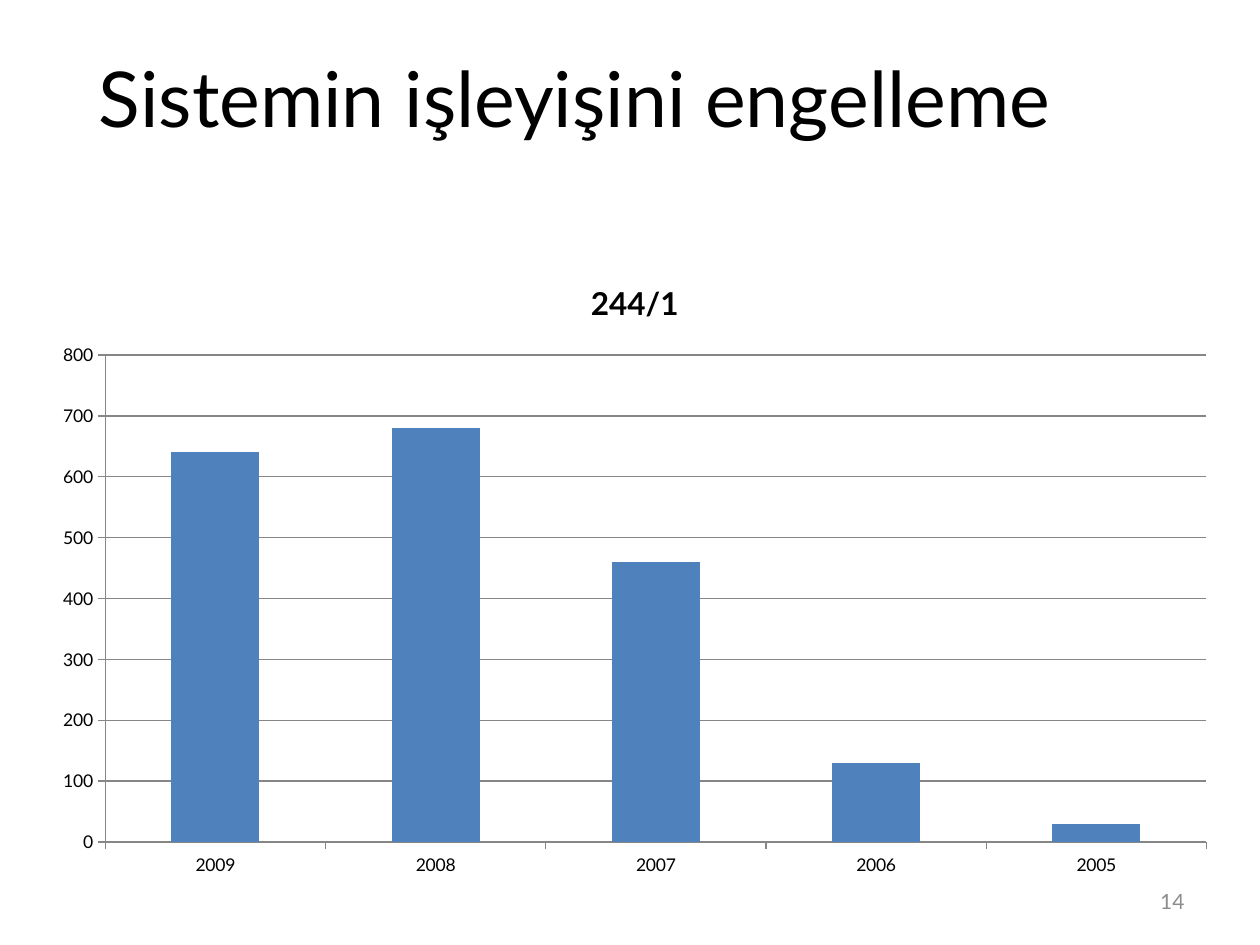
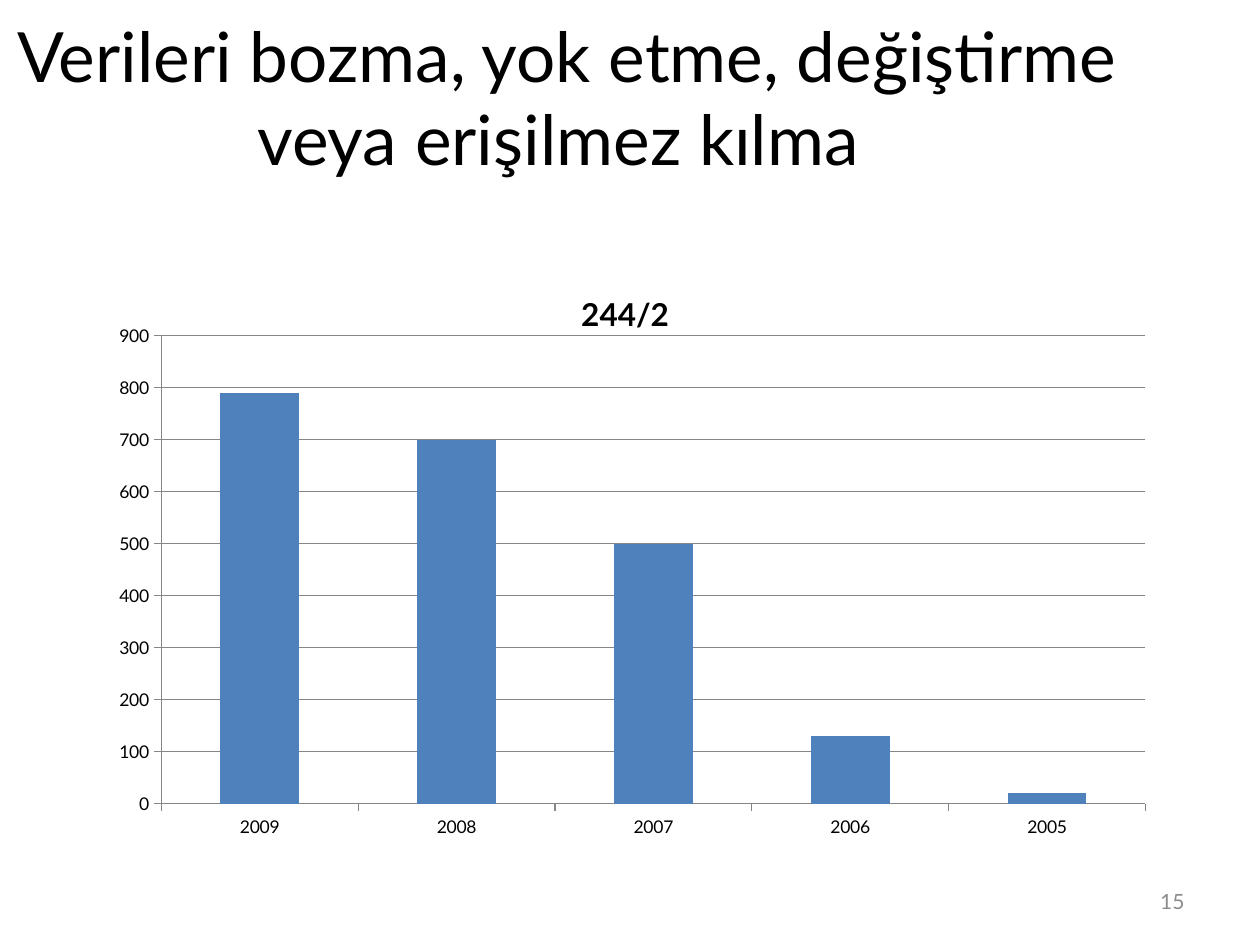
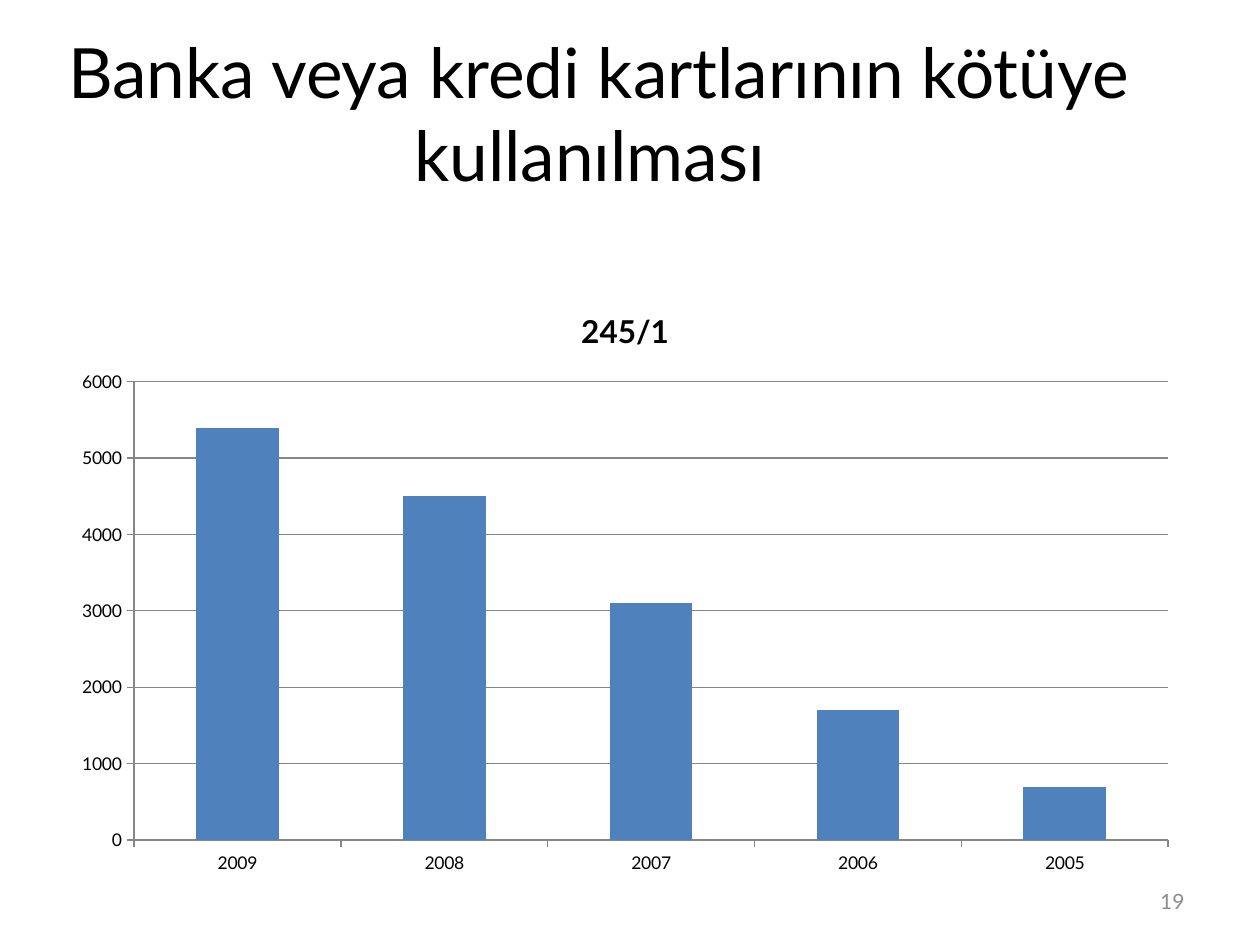
from lxml import etree
from pptx import Presentation
from pptx.chart.data import CategoryChartData
from pptx.dml.color import RGBColor
from pptx.enum import chart as charts, text
from pptx.util import Pt

FONT = "Lato"
BLACK = RGBColor(0x00, 0x00, 0x00)
GREY = RGBColor(0x8C, 0x8C, 0x8C)
AXIS_GREY = RGBColor(0x86, 0x86, 0x86)
BLUE = RGBColor(0x4F, 0x81, 0xBD)
CHART_NS = "http://schemas.openxmlformats.org/drawingml/2006/chart"
YEARS = ["2009", "2008", "2007", "2006", "2005"]
TITLE_ONLY = 5


def style_font(font, size, colour, bold=False):
    font.name, font.size, font.bold = FONT, Pt(size), bold
    font.color.rgb = colour


def fix_plot_area(chart, **fractions):
    """Place the inner plot area at x, y, w, h fractions of the chart."""
    plot_area = chart._chartSpace.chart.plotArea
    for old in plot_area.findall(f"{{{CHART_NS}}}layout"):
        plot_area.remove(old)
    layout = etree.Element(f"{{{CHART_NS}}}layout")
    manual = etree.SubElement(layout, f"{{{CHART_NS}}}manualLayout")
    settings = {"layoutTarget": "inner", "xMode": "edge", "yMode": "edge", **fractions}
    for name, value in settings.items():
        etree.SubElement(manual, f"{{{CHART_NS}}}{name}").set("val", str(value))
    plot_area.insert(0, layout)


class Deck:
    def __init__(self):
        self.presentation = Presentation()
        self.presentation.slide_width = Pt(720)
        self.presentation.slide_height = Pt(540)
        self.page = None

    def add_page(self, number):
        layout = self.presentation.slide_layouts[TITLE_ONLY]
        self.page = self.presentation.slides.add_slide(layout)
        box = self.page.shapes.add_textbox(Pt(516), Pt(500.5), Pt(168), Pt(28.75))
        self.fill_text(box, str(number), 12, GREY, text.PP_ALIGN.RIGHT)

    def fill_text(self, box, words, size, colour, alignment):
        frame = box.text_frame
        frame.text = words
        frame.word_wrap = True
        frame.auto_size = text.MSO_AUTO_SIZE.NONE
        frame.vertical_anchor = text.MSO_ANCHOR.MIDDLE
        for para in frame.paragraphs:
            para.alignment = alignment
            for span in para.runs:
                style_font(span.font, size, colour)

    def title(self, words, left, top, width, size):
        box = self.page.shapes.title
        box.left, box.top, box.width, box.height = Pt(left), Pt(top), Pt(width), Pt(99)
        self.fill_text(box, words, size, BLACK, text.PP_ALIGN.CENTER)

    def column_chart(self, article, values, place, maximum, step):
        data = CategoryChartData()
        data.categories = YEARS
        data.add_series(article, values)
        chart = self.page.shapes.add_chart(
            charts.XL_CHART_TYPE.COLUMN_CLUSTERED, *map(Pt, place), data).chart
        style_font(chart.font, 10, BLACK)
        chart.has_legend = False
        chart.has_title = True
        heading = chart.chart_title.text_frame
        heading.text = article
        style_font(heading.paragraphs[0].runs[0].font, 18, BLACK, bold=True)

        plot = chart.plots[0]
        plot.gap_width = 150
        plot.vary_by_categories = False
        plot.series[0].format.fill.solid()
        plot.series[0].format.fill.fore_color.rgb = BLUE

        values_axis = chart.value_axis
        values_axis.minimum_scale, values_axis.maximum_scale = 0, maximum
        values_axis.major_unit = step
        values_axis.has_major_gridlines = True
        for axis in (chart.category_axis, values_axis):
            axis.major_tick_mark = charts.XL_TICK_MARK.OUTSIDE
            axis.minor_tick_mark = charts.XL_TICK_MARK.NONE
        for ruled in (chart.category_axis, values_axis, values_axis.major_gridlines):
            ruled.format.line.color.rgb = AXIS_GREY
            ruled.format.line.width = Pt(0.75)
        return chart


def main():
    deck = Deck()

    deck.add_page(14)
    deck.title("Sistemin işleyişini engelleme", 4.5, 5.5, 648, 44)
    deck.column_chart("244/1", [640, 680, 460, 130, 30],
                      (22.5, 146, 680.5, 361.5), 800, 100)

    deck.add_page(15)
    deck.title("Verileri bozma, yok etme, değiştirme veya erişilmez kılma ",
               0, 5.5, 648, 39.6)
    chart = deck.column_chart("244/2", [790, 700, 500, 130, 20],
                              (34, 152, 646.5, 361.5), 900, 100)
    fix_plot_area(chart, x=0.09, y=0.11, w=0.87, h=0.74)

    deck.add_page(19)
    deck.title("Banka veya kredi kartlarının kötüye kullanılması ",
               0, 14.5, 684, 39.6)
    deck.column_chart("245/1", [5400, 4500, 3100, 1700, 700],
                      (34, 162, 646.5, 344), 6000, 1000)

    deck.presentation.save("out.pptx")


if __name__ == "__main__":
    main()
